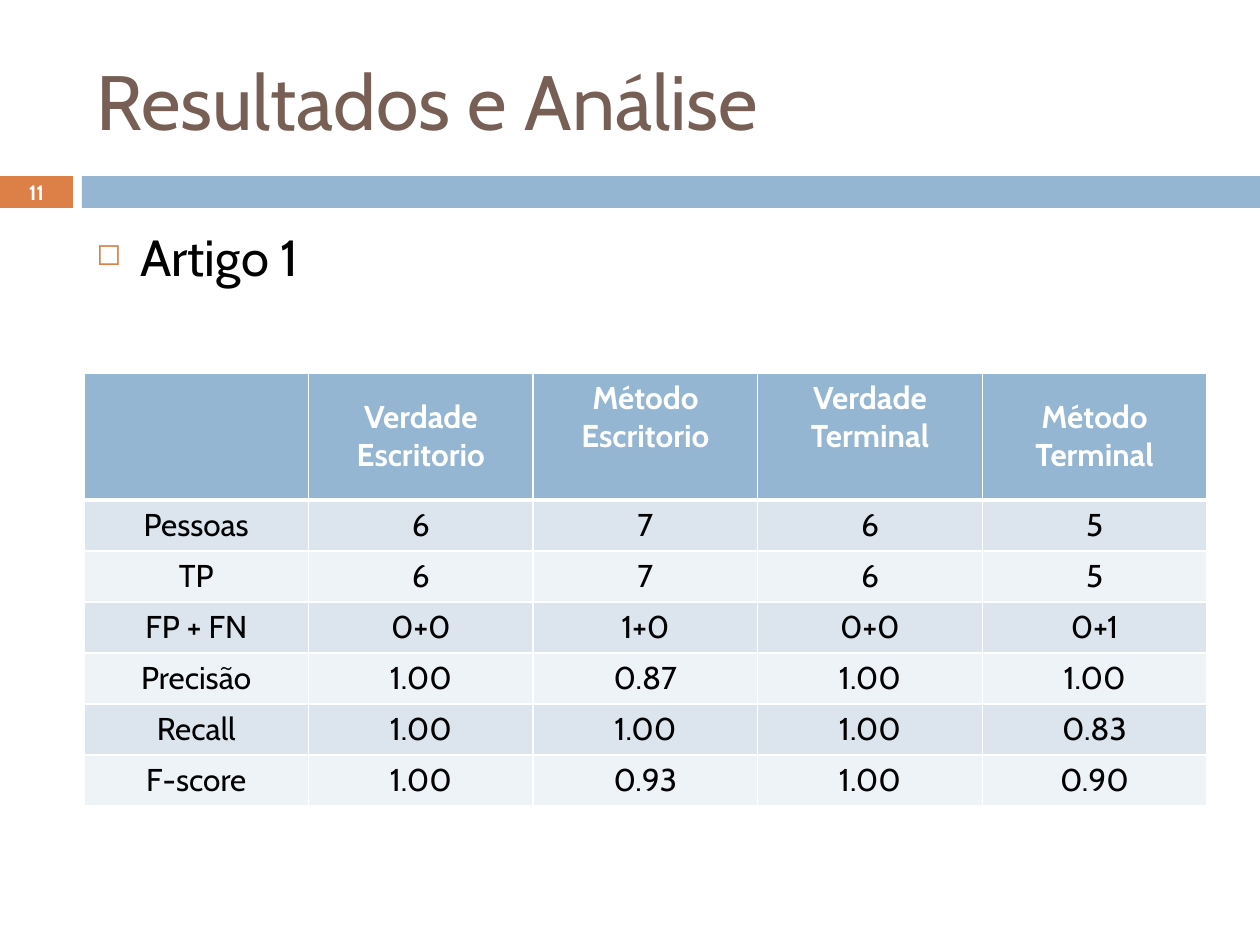
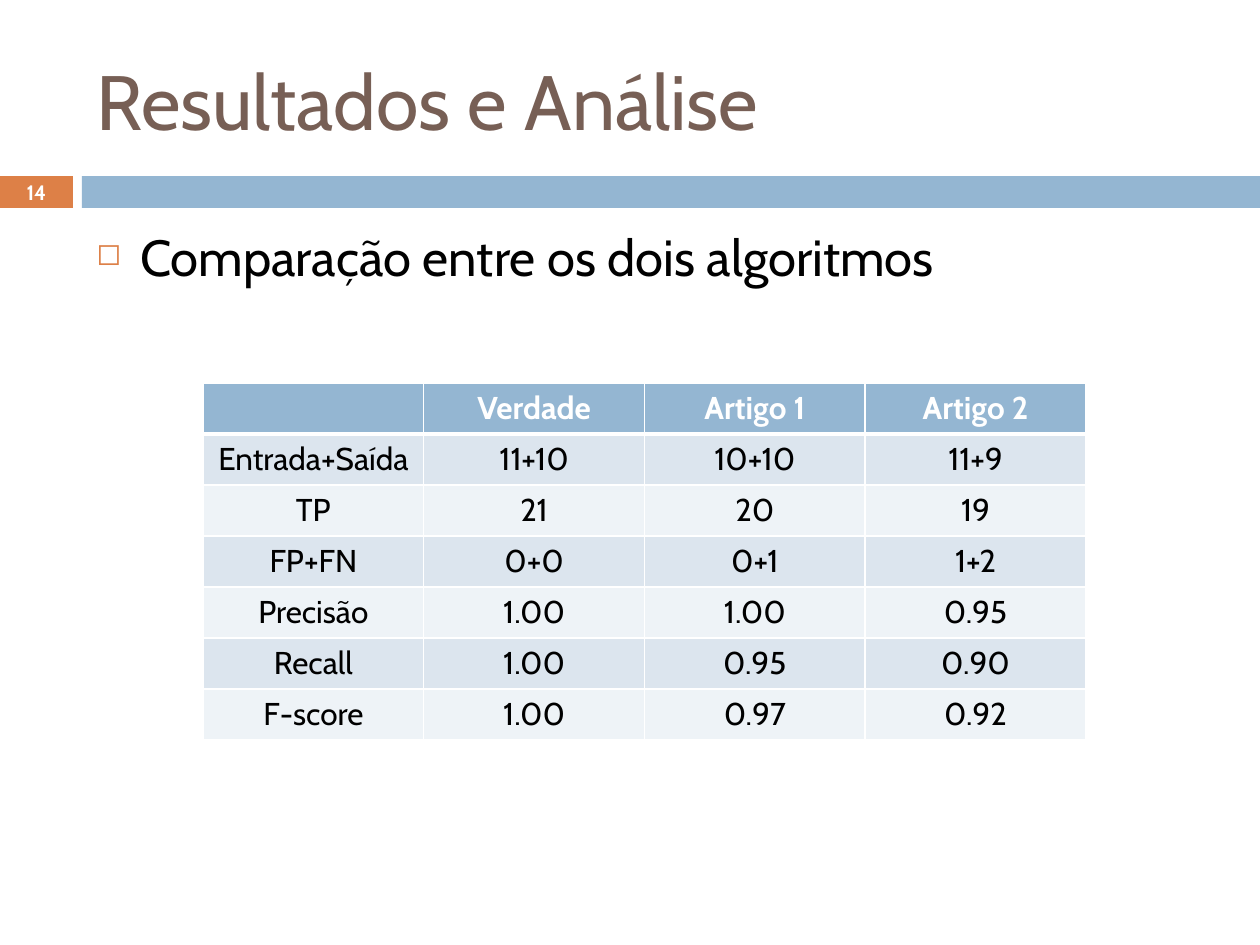
from dataclasses import dataclass

from lxml.etree import SubElement
from pptx import Presentation
from pptx.dml.color import RGBColor
from pptx.enum.shapes import MSO_SHAPE
from pptx.enum.text import MSO_ANCHOR as Anchor, PP_ALIGN as Align
from pptx.oxml import parse_xml
from pptx.oxml.ns import nsdecls, qn
from pptx.util import Emu, Pt

EMU_PER_PX = 914400 / 126
FONT = "Cabin"
COLORS = {
    "title": "775F55",
    "accent": "DD8047",
    "band": "94B6D2",
    "odd_row": "DCE5EE",
    "even_row": "EEF3F7",
    "text": "000000",
    "white": "FFFFFF",
}
TITLE = "Resultados e Análise"
ROW_HEIGHT = 51
BULLET_INDENT = 44
CELL_MARGIN_X, CELL_MARGIN_Y = 13, 6
HEADER_RAISE = 38


@dataclass(frozen=True)
class Box:
    left: int
    top: int
    width: int
    height: int

    def emu(self) -> tuple[Emu, ...]:
        return tuple(px(n) for n in (self.left, self.top, self.width, self.height))


@dataclass(frozen=True)
class TextStyle:
    size: float
    color: str
    bold: bool = False
    align: Align = Align.LEFT
    anchor: Anchor = Anchor.MIDDLE


@dataclass(frozen=True)
class ResultSlide:
    number: int
    topic: str
    table_left: int
    table_top: int
    table_width: int
    header_height: int
    rows: tuple[tuple[str, ...], ...]
    raised_headers: tuple[str, ...] = ()


NUMBER_BAND = Box(0, 176, 73, 32)
TITLE_BAND = Box(82, 176, 1178, 32)
TITLE_BOX = Box(84, 32, 1124, 136)
TOPIC_BOX = Box(84, 220, 1124, 620)

TITLE_STYLE = TextStyle(44, "title")
NUMBER_STYLE = TextStyle(11.9, "white", bold=True, align=Align.CENTER)
TOPIC_STYLE = TextStyle(29, "text", anchor=Anchor.TOP)
HEADER_STYLE = TextStyle(18, "white", bold=True, align=Align.CENTER)
VALUE_STYLE = TextStyle(18, "text", align=Align.CENTER)

SLIDES = (
    ResultSlide(
        11, "Artigo 1", 84, 373, 1123, 127,
        (
            ("", "Verdade Escritorio", "Método Escritorio", "Verdade Terminal", "Método Terminal"),
            ("Pessoas", "6", "7", "6", "5"),
            ("TP", "6", "7", "6", "5"),
            ("FP + FN", "0+0", "1+0", "0+0", "0+1"),
            ("Precisão", "1.00", "0.87", "1.00", "1.00"),
            ("Recall", "1.00", "1.00", "1.00", "0.83"),
            ("F-score", "1.00", "0.93", "1.00", "0.90"),
        ),
        raised_headers=("Método Escritorio", "Verdade Terminal"),
    ),
    ResultSlide(
        14, "Comparação entre os dois algoritmos", 203, 383, 883, ROW_HEIGHT,
        (
            ("", "Verdade", "Artigo 1", "Artigo 2"),
            ("Entrada+Saída", "11+10", "10+10", "11+9"),
            ("TP", "21", "20", "19"),
            ("FP+FN", "0+0", "0+1", "1+2"),
            ("Precisão", "1.00", "1.00", "0.95"),
            ("Recall", "1.00", "0.95", "0.90"),
            ("F-score", "1.00", "0.97", "0.92"),
        ),
    ),
)


def px(length: float) -> Emu:
    return Emu(round(length * EMU_PER_PX))


def rgb(name: str) -> RGBColor:
    return RGBColor.from_string(COLORS[name])


def write(frame, text: str, style: TextStyle) -> None:
    frame.text = text
    paragraph = frame.paragraphs[0]
    paragraph.alignment = style.align
    for run in paragraph.runs:
        run.font.name = FONT
        run.font.size = Pt(style.size)
        run.font.bold = style.bold
        run.font.color.rgb = rgb(style.color)


def add_band(slide, box: Box, color: str) -> None:
    band = slide.shapes.add_shape(MSO_SHAPE.RECTANGLE, *box.emu())
    band.shadow.inherit = False
    band.fill.solid()
    band.fill.fore_color.rgb = rgb(color)
    band.line.fill.background()


def add_text(slide, box: Box, text: str, style: TextStyle):
    frame = slide.shapes.add_textbox(*box.emu()).text_frame
    frame.word_wrap = True
    frame.vertical_anchor = style.anchor
    write(frame, text, style)
    return frame


def add_bullet(paragraph) -> None:
    """Give the paragraph a hanging, coloured square bullet."""
    paragraph.space_before = Pt(7)
    props = paragraph._p.get_or_add_pPr()
    props.set("marL", str(px(BULLET_INDENT)))
    props.set("indent", str(-px(BULLET_INDENT)))
    color = SubElement(props, qn("a:buClr"))
    SubElement(color, qn("a:srgbClr"), val=COLORS["accent"])
    SubElement(props, qn("a:buSzPct"), val="60000")
    SubElement(props, qn("a:buChar"), char="◻")


def set_borders(cell, top: int, bottom: int) -> None:
    """Draw white borders, one point wide at the sides; top and bottom in points."""
    props = cell._tc.get_or_add_tcPr()
    widths = {"lnL": 1, "lnR": 1, "lnT": top, "lnB": bottom}
    for position, (side, width) in enumerate(widths.items()):
        props.insert(position, parse_xml(
            f'<a:{side} {nsdecls("a")} w="{Pt(width)}"><a:solidFill>'
            f'<a:srgbClr val="{COLORS["white"]}"/></a:solidFill></a:{side}>'))


def row_color(row: int) -> str:
    if row == 0:
        return "band"
    return "odd_row" if row % 2 else "even_row"


def add_results(slide, content: ResultSlide) -> None:
    heights = [content.header_height] + [ROW_HEIGHT] * (len(content.rows) - 1)
    columns = len(content.rows[0])
    box = Box(content.table_left, content.table_top, content.table_width, sum(heights))
    table = slide.shapes.add_table(len(heights), columns, *box.emu()).table
    table.first_row = table.horz_banding = False
    for column in table.columns:
        column.width = px(content.table_width / columns)

    for r, (height, values) in enumerate(zip(heights, content.rows)):
        table.rows[r].height = px(height)
        for c, value in enumerate(values):
            cell = table.cell(r, c)
            write(cell.text_frame, value, VALUE_STYLE if r else HEADER_STYLE)
            cell.vertical_anchor = Anchor.MIDDLE
            cell.margin_left = cell.margin_right = px(CELL_MARGIN_X)
            raised = r == 0 and value in content.raised_headers
            cell.margin_top = px(CELL_MARGIN_Y)
            cell.margin_bottom = px(CELL_MARGIN_Y + HEADER_RAISE * raised)
            cell.fill.solid()
            cell.fill.fore_color.rgb = rgb(row_color(r))
            set_borders(cell, top=3 if r == 1 else 1, bottom=3 if r == 0 else 1)


def add_result_slide(prs, content: ResultSlide) -> None:
    slide = prs.slides.add_slide(prs.slide_layouts[6])
    add_band(slide, NUMBER_BAND, "accent")
    add_band(slide, TITLE_BAND, "band")
    add_text(slide, TITLE_BOX, TITLE, TITLE_STYLE)
    number = add_text(slide, NUMBER_BAND, str(content.number), NUMBER_STYLE)
    number.margin_top = number.margin_bottom = 0
    topic = add_text(slide, TOPIC_BOX, content.topic, TOPIC_STYLE)
    add_bullet(topic.paragraphs[0])
    add_results(slide, content)


def main() -> None:
    prs = Presentation()
    prs.slide_width, prs.slide_height = px(1260), px(945)
    for content in SLIDES:
        add_result_slide(prs, content)
    prs.save("out.pptx")


if __name__ == "__main__":
    main()
